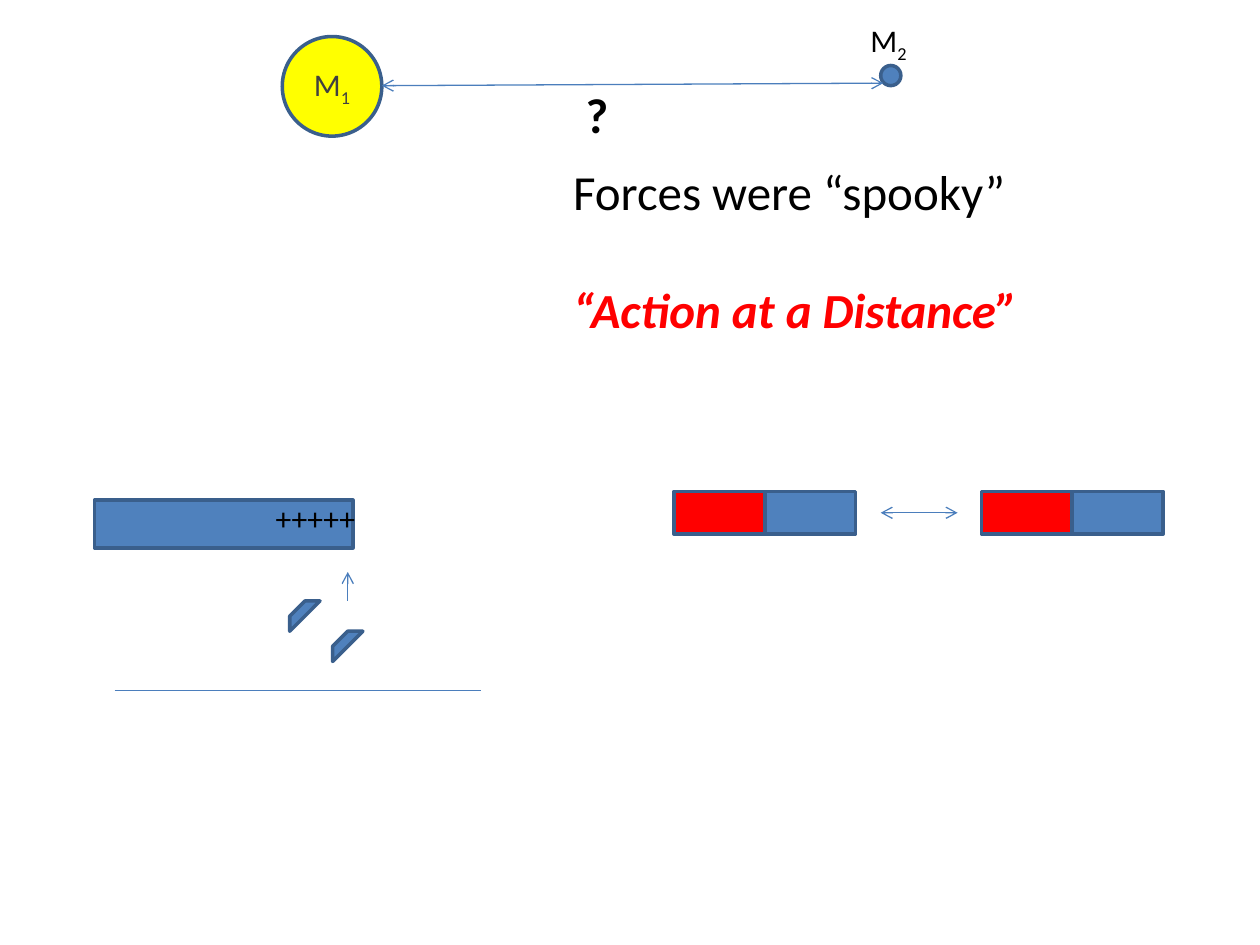
"""Build a slide on forces that act at a distance."""
from lxml import etree
from pptx import Presentation
from pptx.dml.color import RGBColor
from pptx.enum.shapes import MSO_CONNECTOR, MSO_SHAPE
from pptx.enum.text import MSO_ANCHOR, PP_ALIGN
from pptx.oxml.ns import qn
from pptx.util import Inches, Pt

OVAL, BAR, STRIPE = MSO_SHAPE.OVAL, MSO_SHAPE.RECTANGLE, MSO_SHAPE.DIAGONAL_STRIPE
STRAIGHT, CENTER, MIDDLE = MSO_CONNECTOR.STRAIGHT, PP_ALIGN.CENTER, MSO_ANCHOR.MIDDLE
COLUMNS, ROWS = 100, 75
BLUE, OUTLINE, ARROW_BLUE = "4F81BD", "3A5F8C", "4B7EBC"
RED, YELLOW, BLACK, GREY = "FF0000", "FFFF00", "000000", "404040"


def grid(*counts):
    """Turn counts of grid columns or rows into slide lengths."""
    return [Inches(count * 10 / COLUMNS) for count in counts]


def color(hex_code):
    """Turn a hex string into a colour."""
    return RGBColor.from_string(hex_code)


def style(paragraph, size, hex_code, bold=False, italic=False):
    """Set the font of a whole paragraph."""
    font = paragraph.font
    font.name, font.size = "Calibri", Pt(size)
    font.bold, font.italic = bold, italic
    font.color.rgb = color(hex_code)


def write_mass(paragraph, number, hex_code):
    """Write the symbol of a mass with its subscript."""
    style(paragraph, 18, hex_code)
    paragraph.add_run().text = "M"
    subscript = paragraph.add_run()
    subscript.text = number
    subscript.font._element.set("baseline", "-25000")


def add_body(shapes, kind, box, fill=BLUE):
    """Add an outlined solid shape."""
    body = shapes.add_shape(kind, *grid(*box))
    body.shadow.inherit = False
    body.fill.solid()
    body.fill.fore_color.rgb = color(fill)
    body.line.color.rgb = color(OUTLINE)
    body.line.width = Pt(2)
    return body


def add_label(shapes, box):
    """Add a wrapping text box and return its text frame."""
    frame = shapes.add_textbox(*grid(*box)).text_frame
    frame.word_wrap = True
    return frame


def add_text(shapes, box, text, size, bold=False):
    """Add a label of one black paragraph."""
    paragraph = add_label(shapes, box).paragraphs[0]
    paragraph.text = text
    style(paragraph, size, BLACK, bold)


def add_line(shapes, start, end, arrowheads=()):
    """Add a thin line with open arrowheads at the named ends."""
    line = shapes.add_connector(STRAIGHT, *grid(*start, *end))
    line.line.color.rgb = color(ARROW_BLUE)
    line.line.width = Pt(0.75)
    outline = line.line._get_or_add_ln()
    for arrowhead in arrowheads:
        etree.SubElement(outline, qn(f"a:{arrowhead}"), type="arrow")
    etree.SubElement(line._element.spPr, qn("a:effectLst"))


def add_magnet(shapes, left, top, pole_width=7.2, height=3.4):
    """Add a bar magnet as a group of a red and a blue pole."""
    poles = shapes.add_group_shape().shapes
    add_body(poles, BAR, (left + pole_width, top, pole_width, height))
    add_body(poles, BAR, (left, top, pole_width, height), RED)


def add_statement(shapes):
    """Add the two statements about forces."""
    frame = add_label(shapes, (44.5, 12.3, 44.1, 24.6))
    spooky, action = frame.paragraphs[0], frame.add_paragraph()
    spooky.text = "Forces were “spooky”"
    style(spooky, 28, BLACK)
    action.text = "“Action at a Distance”"
    style(action, 28, RED, bold=True, italic=True)
    action.space_before = Pt(34)


def add_gravity(shapes):
    """Add two masses that attract each other."""
    large_mass = add_body(shapes, OVAL, (22.4, 2.9, 7.9, 7.9), YELLOW)
    large_mass.text_frame.vertical_anchor = MIDDLE
    symbol = large_mass.text_frame.paragraphs[0]
    symbol.alignment = CENTER
    write_mass(symbol, "1", GREY)
    add_body(shapes, OVAL, (69.9, 5.2, 1.6, 1.6))
    add_line(shapes, (30.3, 6.8), (70.1, 6.6), ("headEnd", "tailEnd"))
    write_mass(add_label(shapes, (68.1, 1.2, 5.5, 4)).paragraphs[0], "2", BLACK)
    add_text(shapes, (45.5, 6.2, 4.9, 5.7), "?", 28, bold=True)


def add_electricity(shapes):
    """Add a charged rod that lifts scraps from a table."""
    add_body(shapes, BAR, (7.5, 39.7, 20.5, 3.8))
    add_text(shapes, (20.9, 39.1, 9.4, 4), "+++++", 18)
    add_line(shapes, (9.1, 54.8), (38.2, 54.8))
    for left, top in ((23, 47.7), (26.4, 50.1)):
        add_body(shapes, STRIPE, (left, top, 2.4, 2.4))
    add_line(shapes, (27.6, 47.7), (27.6, 45.4), ("tailEnd",))


def add_magnetism(shapes):
    """Add two magnets that act on each other."""
    for left in (53.5, 77.9):
        add_magnet(shapes, left, 39)
    add_line(shapes, (69.9, 40.7), (76, 40.7), ("headEnd", "tailEnd"))


def main():
    """Build and save the slide."""
    deck = Presentation()
    deck.slide_width, deck.slide_height = grid(COLUMNS, ROWS)
    shapes = deck.slides.add_slide(deck.slide_layouts[6]).shapes
    for add_part in (add_statement, add_gravity, add_electricity, add_magnetism):
        add_part(shapes)
    deck.save("out.pptx")


if __name__ == "__main__":
    main()
